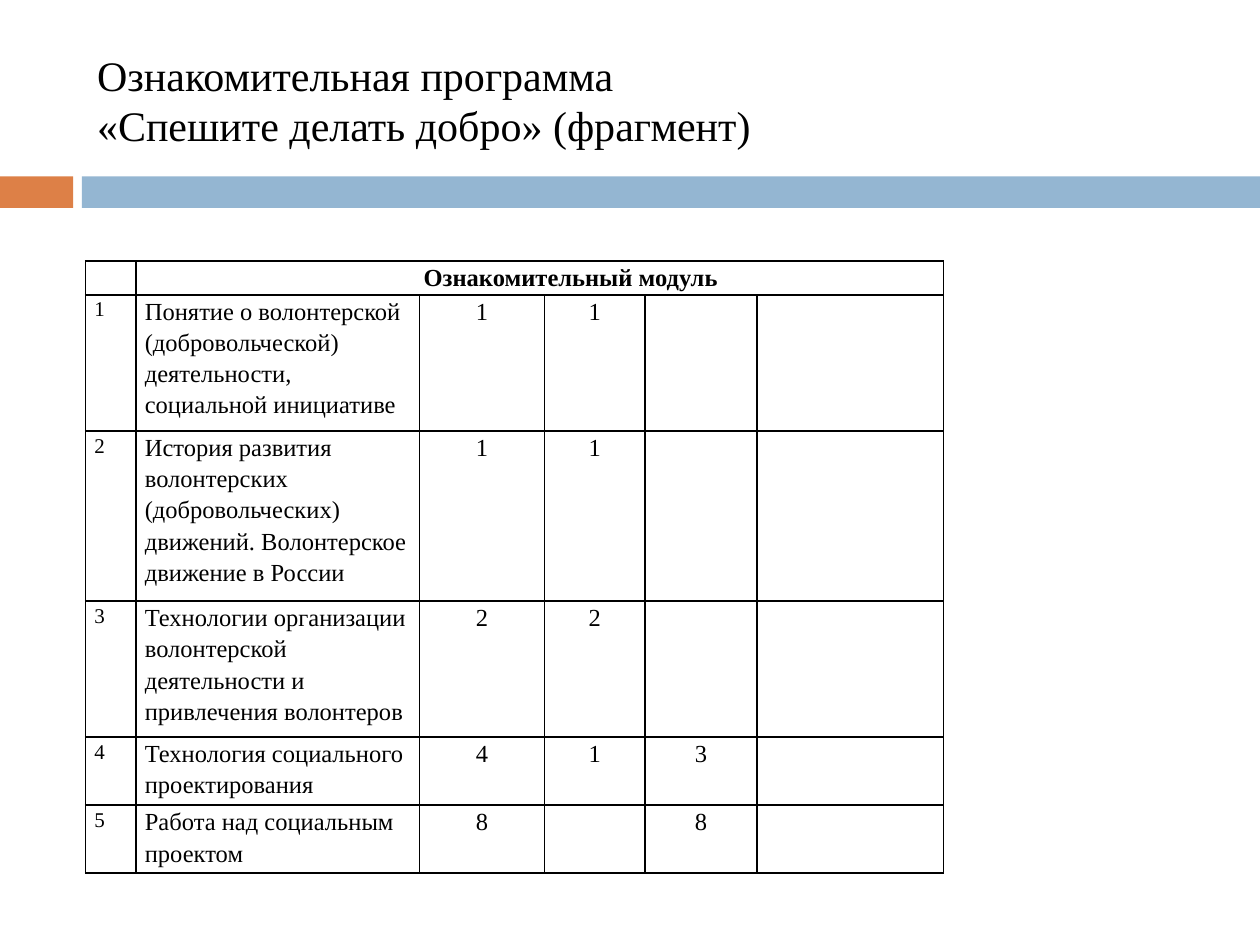
from lxml import etree
from pptx import Presentation
from pptx.dml.color import RGBColor
from pptx.enum.shapes import MSO_SHAPE
from pptx.enum.text import MSO_ANCHOR, PP_ALIGN
from pptx.oxml.ns import qn
from pptx.util import Inches, Pt

RECTANGLE = MSO_SHAPE.RECTANGLE
MIDDLE = MSO_ANCHOR.MIDDLE
LEFT, CENTER = PP_ALIGN.LEFT, PP_ALIGN.CENTER
ORANGE = RGBColor(0xDD, 0x80, 0x47)
BLUE = RGBColor(0x94, 0xB6, 0xD2)
BLACK = RGBColor(0, 0, 0)
FONT = "Times New Roman"

TITLE = "Ознакомительная программа\v«Спешите делать добро» (фрагмент)"
MODULE = "Ознакомительный модуль"
TOPICS = [
    ("Понятие о волонтерской (добровольческой) деятельности, социальной инициативе", "1", "1", "", ""),
    ("История развития волонтерских (добровольческих) движений. "
     "Волонтерское движение в России", "1", "1", "", ""),
    ("Технологии организации волонтерской деятельности и привлечения волонтеров", "2", "2", "", ""),
    ("Технология социального проектирования", "4", "1", "3", ""),
    ("Работа над социальным проектом", "8", "", "8", ""),
]
COLUMN_WIDTHS = [0.4, 2.25, 0.99, 0.8, 0.89, 1.48]
LINE_HEIGHT = 0.27
ROW_LINES = [1, 4, 5, 4, 2, 2]
BANDS = [(0, 0.58, ORANGE), (0.65, 9.35, BLUE)]


def style_text(paragraph, size, align=LEFT, bold=False):
    paragraph.alignment = align
    font = paragraph.font
    font.name, font.size, font.bold = FONT, Pt(size), bold
    font.color.rgb = BLACK


def add_borders(cell):
    properties = cell._tc.get_or_add_tcPr()
    for position, side in enumerate(("a:lnL", "a:lnR", "a:lnT", "a:lnB")):
        border = etree.Element(qn(side), w=str(Pt(1)))
        fill = etree.SubElement(border, qn("a:solidFill"))
        etree.SubElement(fill, qn("a:srgbClr"), val=str(BLACK))
        properties.insert(position, border)


def fill_cell(cell, text, size, align, bold):
    cell.fill.background()
    cell.margin_left = cell.margin_right = Inches(0.07)
    cell.margin_top = cell.margin_bottom = 0
    cell.text = text
    paragraph = cell.text_frame.paragraphs[0]
    style_text(paragraph, size, align, bold)
    paragraph.line_spacing = 1.15
    add_borders(cell)


def add_bands(slide):
    for left, width, color in BANDS:
        band = slide.shapes.add_shape(
            RECTANGLE, Inches(left), Inches(1.4), Inches(width), Inches(0.25))
        band.shadow.inherit = False
        band.fill.solid()
        band.fill.fore_color.rgb = color
        band.line.fill.background()


def add_title(slide):
    title = slide.shapes.title
    title.left, title.top = Inches(0.67), Inches(0.25)
    title.width, title.height = Inches(8.92), Inches(1.08)
    title.text_frame.text = TITLE
    title.text_frame.vertical_anchor = MIDDLE
    style_text(title.text_frame.paragraphs[0], 24)


def add_program(slide):
    rows = [("", MODULE, "", "", "", "")]
    rows += [(str(number), *topic) for number, topic in enumerate(TOPICS, 1)]
    program = slide.shapes.add_table(
        len(rows), len(COLUMN_WIDTHS), Inches(0.68), Inches(2.07),
        Inches(sum(COLUMN_WIDTHS)), Inches(LINE_HEIGHT * sum(ROW_LINES))).table
    program.first_row = program.horz_banding = False
    for column, width in zip(program.columns, COLUMN_WIDTHS):
        column.width = Inches(width)
    for r, (values, lines) in enumerate(zip(rows, ROW_LINES)):
        program.rows[r].height = Inches(LINE_HEIGHT * lines)
        for c, value in enumerate(values):
            centered = r == 0 or c > 1
            fill_cell(program.cell(r, c), value, 14 if c else 12,
                      CENTER if centered else LEFT, r == 0)
    module = program.cell(0, 1)
    module.merge(program.cell(0, len(COLUMN_WIDTHS) - 1))
    indent = str(Inches(0.49))
    module.text_frame.paragraphs[0]._p.get_or_add_pPr().set("indent", indent)


def main():
    """Build the slide with the programme title and its module table."""
    deck = Presentation()
    deck.slide_width, deck.slide_height = Inches(10), Inches(7.5)
    slide = deck.slides.add_slide(deck.slide_layouts[5])
    add_bands(slide)
    add_title(slide)
    add_program(slide)
    deck.save("out.pptx")


if __name__ == "__main__":
    main()
